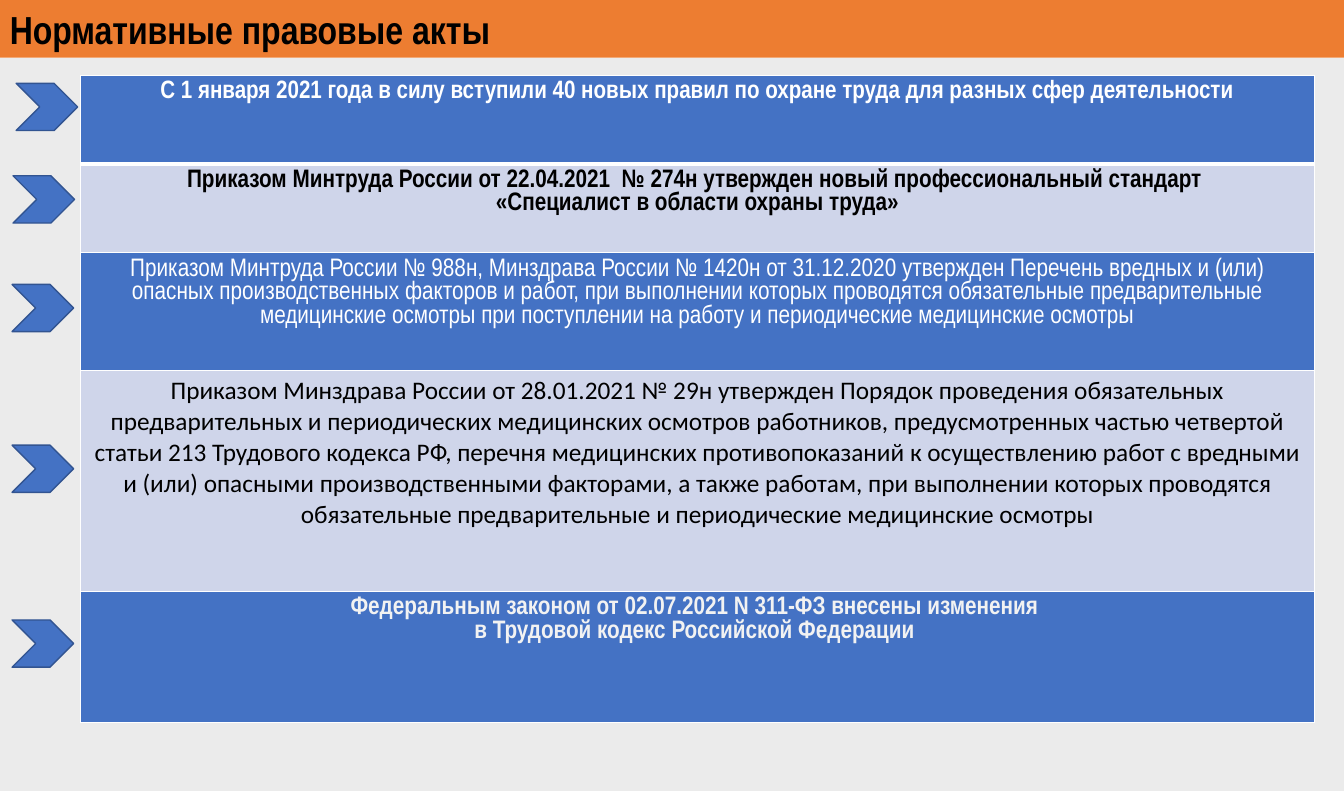
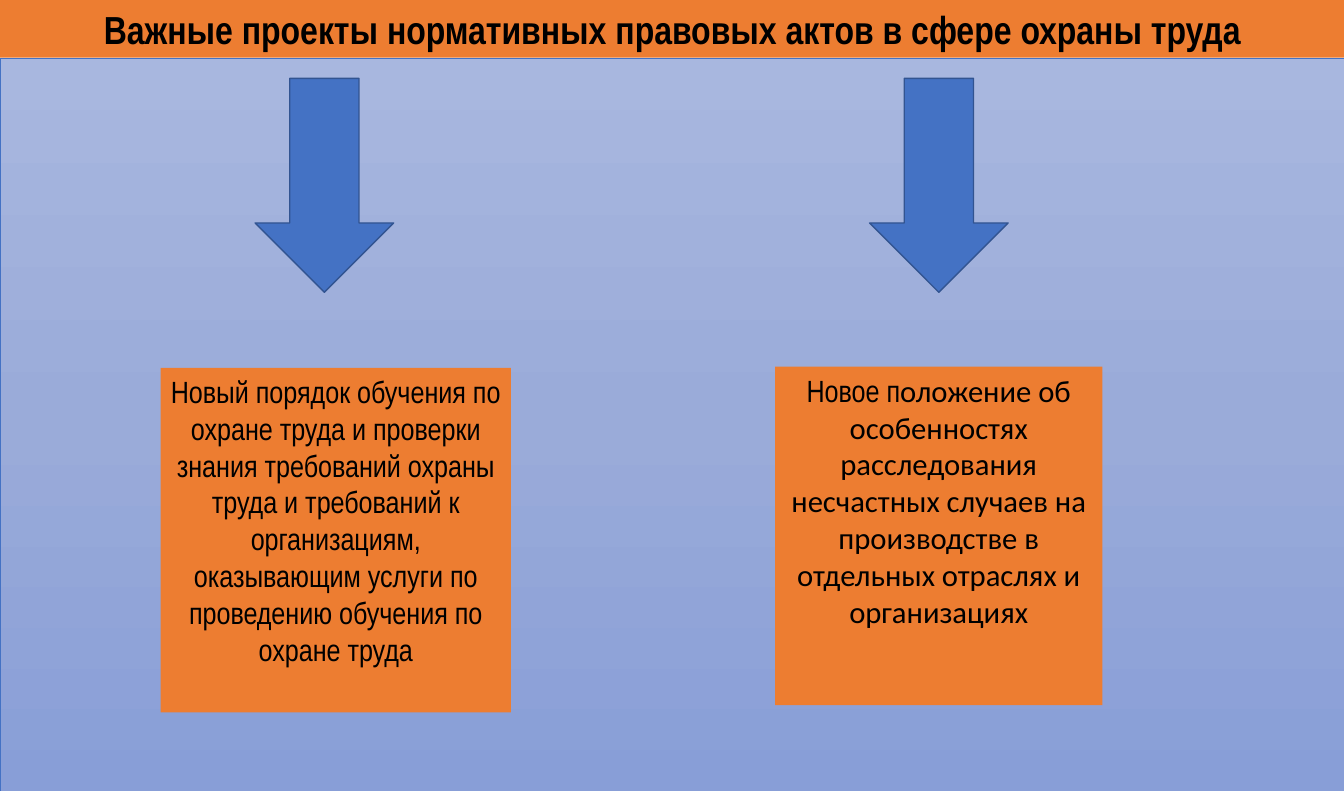
"""Builds two slides on new labour safety regulations."""
from copy import deepcopy
from dataclasses import dataclass

from lxml import etree
from pptx import Presentation
from pptx.dml.color import RGBColor
from pptx.enum.shapes import MSO_SHAPE
from pptx.enum.text import MSO_ANCHOR, PP_ALIGN
from pptx.oxml.ns import qn
from pptx.util import Cm, Pt

RECT = MSO_SHAPE.RECTANGLE
CHEVRON = MSO_SHAPE.CHEVRON
ARROW = MSO_SHAPE.DOWN_ARROW
TOP = MSO_ANCHOR.TOP
MIDDLE = MSO_ANCHOR.MIDDLE
LEFT = PP_ALIGN.LEFT
CENTER = PP_ALIGN.CENTER


@dataclass(frozen=True)
class Theme:
    orange: str = "ED7D31"
    blue: str = "4472C4"
    edge: str = "325491"
    pale: str = "CFD5EA"
    gray: str = "EBEBEB"
    white: str = "FFFFFF"
    soft: str = "F2F2F2"
    black: str = "000000"
    fade: tuple = ("A8B7DF", "9AABD9", "889ED7")
    narrow: str = "Arial Narrow"
    plain: str = "Calibri"
    title: float = 28
    body: float = 22
    head: float = 18
    cell: float = 18.1
    tight: float = 16.9
    loose: float = 26.4


LOOK = Theme()


def write(frame, *paras, size=LOOK.cell, font=LOOK.narrow, color=LOOK.black,
          bold=False, align=CENTER, pitch=None):
    frame.word_wrap = True
    for i, runs in enumerate(paras):
        para = frame.add_paragraph() if i else frame.paragraphs[0]
        para.alignment = align
        if pitch:
            para.line_spacing = Pt(pitch)
        for part in [(runs, font)] if isinstance(runs, str) else runs:
            run = para.add_run()
            run.text, run.font.name = part
            run.font.size = Pt(size)
            run.font.bold = bold
            run.font.color.rgb = RGBColor.from_string(color)


class Deck:
    def __init__(self, wide, high):
        self.show = Presentation()
        self.show.slide_width = Cm(wide)
        self.show.slide_height = Cm(high)
        self.slide = None

    def across(self, share):
        return round(self.show.slide_width * share / 100)

    def down(self, share):
        return round(self.show.slide_height * share / 100)

    def area(self, x, y, w, h):
        return self.across(x), self.down(y), self.across(w), self.down(h)

    def shape(self, kind, spot, fill, line=None, width=1):
        item = self.slide.shapes.add_shape(kind, *self.area(*spot))
        item.shadow.inherit = False
        if isinstance(fill, str):
            item.fill.solid()
            item.fill.fore_color.rgb = RGBColor.from_string(fill)
        else:
            self.blend(item, fill)
        if line:
            item.line.color.rgb = RGBColor.from_string(line)
            item.line.width = Pt(width)
        else:
            item.line.fill.background()
        return item

    def blend(self, item, colors):
        item.fill.gradient()
        item.fill.gradient_angle = 270
        first = item.fill._xPr.find(".//" + qn("a:gs"))
        for _ in colors[2:]:
            first.addnext(deepcopy(first))
        for i, (stop, color) in enumerate(zip(item.fill.gradient_stops, colors)):
            stop.position = i / (len(colors) - 1)
            stop.color.rgb = RGBColor.from_string(color)

    def page(self, title, fill, align=CENTER, line=None):
        self.slide = self.show.slides.add_slide(self.show.slide_layouts[6])
        self.shape(RECT, (0, 7.32, 100, 92.68), fill, line, 0.5)
        self.box((0, 0, 100, 7.28), title, anchor=MIDDLE, size=LOOK.title,
                 bold=True, align=align)

    def box(self, spot, *paras, anchor=TOP, **form):
        frame = self.shape(RECT, spot, LOOK.orange).text_frame
        frame.vertical_anchor = anchor
        write(frame, *paras, **form)

    def icon(self, kind, *spot):
        self.shape(kind, spot, LOOK.blue, LOOK.edge)

    def table(self, x, y, w, rows):
        high = sum(row[0] for row in rows)
        grid = self.slide.shapes.add_table(
            len(rows), 1, *self.area(x, y, w, high)).table
        for i, (share, paras, form) in enumerate(rows):
            grid.rows[i].height = self.down(share)
            cell = grid.cell(i, 0)
            self.border(cell, L=1, R=1, T=3 if i == 1 else 1, B=1 if i else 3)
            cell.fill.solid()
            cell.fill.fore_color.rgb = RGBColor.from_string(
                LOOK.pale if i % 2 else LOOK.blue)
            write(cell.text_frame, *paras, **form)

    def border(self, cell, **sides):
        props = cell._tc.get_or_add_tcPr()
        for side, width in sides.items():
            line = etree.SubElement(props, qn("a:ln" + side), w=str(Pt(width)))
            fill = etree.SubElement(line, qn("a:solidFill"))
            etree.SubElement(fill, qn("a:srgbClr"), val=LOOK.white)


def acts(deck):
    deck.page("Нормативные правовые акты", LOOK.gray, LEFT)
    strong = dict(bold=True, pitch=LOOK.tight)
    deck.table(5.98, 9.53, 91.82, [
        (11.22, ["С 1 января 2021 года в силу вступили 40 новых правил по "
                 "охране труда для разных сфер деятельности"],
         dict(strong, size=LOOK.head, color=LOOK.white)),
        (11.22, ["Приказом Минтруда России от 22.04.2021  № 274н утвержден "
                 "новый профессиональный стандарт ",
                 "«Специалист в области охраны труда»"], strong),
        (14.9, ["Приказом Минтруда России № 988н, Минздрава России № 1420н "
                "от 31.12.2020 утвержден Перечень вредных и (или) опасных "
                "производственных факторов и работ, при выполнении которых "
                "проводятся обязательные предварительные медицинские осмотры "
                "при поступлении на работу и периодические медицинские "
                "осмотры"],
         dict(color=LOOK.white, pitch=LOOK.tight)),
        (27.9, ["Приказом Минздрава России от 28.01.2021 № 29н утвержден "
                "Порядок проведения обязательных предварительных и "
                "периодических медицинских осмотров работников, "
                "предусмотренных частью четвертой статьи 213 Трудового "
                "кодекса РФ, перечня медицинских противопоказаний к "
                "осуществлению работ с вредными и (или) опасными "
                "производственными факторами, а также работам, при "
                "выполнении которых проводятся обязательные предварительные "
                "и периодические медицинские осмотры"],
         dict(font=LOOK.plain)),
        (16.6, ["Федеральным законом от 02.07.2021 N 311-ФЗ внесены "
                "изменения ", "в Трудовой кодекс Российской Федерации "],
         dict(strong, color=LOOK.soft)),
    ])
    for x, y in ((1.2, 10.54), (0.97, 22.23), (0.9, 35.96), (0.9, 56.28),
                 (0.9, 78.38)):
        deck.icon(CHEVRON, x, y, 4.58, 5.97)


def drafts(deck):
    deck.page("Важные проекты нормативных правовых актов в сфере охраны труда",
              LOOK.fade, line=LOOK.blue)
    for x in (18.98, 64.7):
        deck.icon(ARROW, x, 9.91, 10.31, 27.05)
    form = dict(size=LOOK.body, pitch=LOOK.loose)
    deck.box((11.95, 46.5, 26.07, 43.56),
             "Новый порядок обучения по охране труда и проверки знания "
             "требований охраны труда и требований к организациям, "
             "оказывающим услуги по проведению обучения по охране труда",
             **form)
    deck.box((57.67, 46.36, 24.35, 42.8),
             [("Новое п", LOOK.narrow),
              ("оложение об особенностях расследования несчастных случаев на "
               "производстве в отдельных отраслях и организациях",
               LOOK.plain)], **form)


def main():
    deck = Deck(34, 20)
    acts(deck)
    drafts(deck)
    deck.show.save("out.pptx")


if __name__ == "__main__":
    main()
